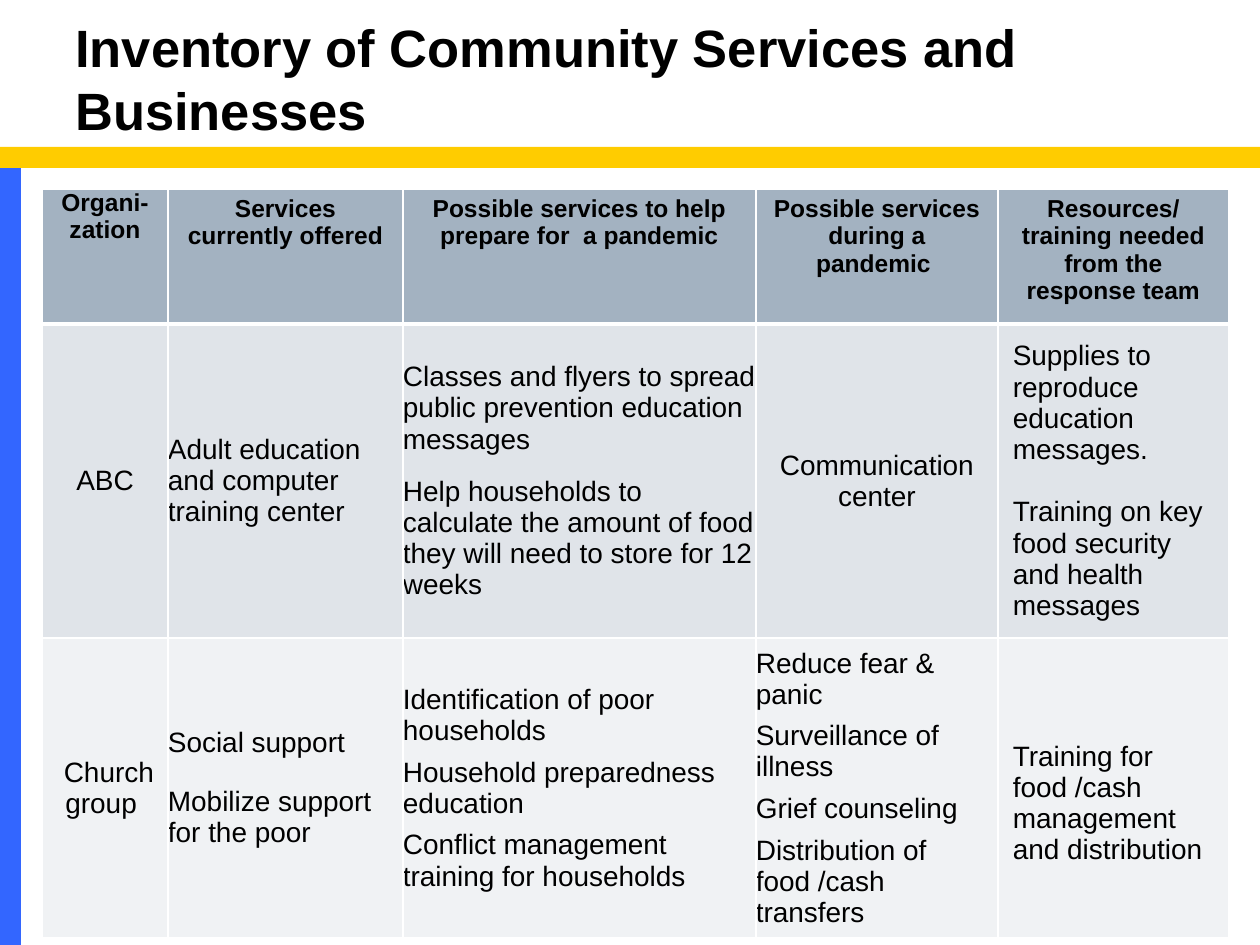
from dataclasses import dataclass

from lxml.etree import SubElement
from pptx import Presentation
from pptx.dml.color import RGBColor
from pptx.enum.shapes import MSO_SHAPE as Shape
from pptx.enum.text import MSO_ANCHOR as Anchor, PP_ALIGN as Align
from pptx.oxml.ns import qn
from pptx.util import Emu, Pt

PX = 914400 // 126
FONT = "Arial"
COLORS = {
    "text": "000000",
    "border": "FFFFFF",
    "gold": "FFCC00",
    "blue": "3366FF",
    "header": "A3B2C1",
    "odd": "E0E4E9",
    "even": "F0F2F4",
}
COL_WIDTHS = (126, 235, 353, 242, 231)
ROW_HEIGHTS = (135, 314, 276)
ROW_FILLS = ("header", "odd", "even")


@dataclass
class Bar:
    x: int
    y: int
    w: int
    h: int
    color: str


@dataclass
class Entry:
    paras: tuple[str, ...]
    align: Align = Align.LEFT
    after: int = 0
    side: int = 0
    top: int = 0
    bottom: int = 0
    anchor: Anchor = Anchor.MIDDLE
    size: int = 16
    bold: bool = False


def heading(text: str, side: int = 13, pad: int = 6) -> Entry:
    return Entry((text,), Align.CENTER, side=side, top=pad, bottom=pad,
                 anchor=Anchor.TOP, size=14, bold=True)


BARS = (Bar(0, 147, 1260, 21, "gold"), Bar(0, 168, 21, 777, "blue"))
ROWS = (
    (
        heading("Organi-zation", side=15, pad=0),
        heading("Services currently offered"),
        heading("Possible services to help prepare for  a pandemic"),
        heading("Possible services during a pandemic "),
        heading("Resources/ training needed from the response team"),
    ),
    (
        Entry(("ABC",), Align.CENTER),
        Entry(("Adult education and computer training center",)),
        Entry(("Classes and flyers to spread public prevention education messages",
               "Help households to calculate the amount of food they will need "
               "to store for 12 weeks"), after=12),
        Entry(("Communication center",), Align.CENTER),
        Entry(("Supplies to reproduce education messages.",
               "Training on key food security and health messages"),
              after=18, side=15),
    ),
    (
        Entry((" Church group ",), Align.CENTER),
        Entry(("Social support", "Mobilize support for the poor"), after=16),
        Entry(("Identification of poor households",
               "Household preparedness education",
               "Conflict management training for households"), after=6),
        Entry(("Reduce fear & panic", "Surveillance of illness",
               "Grief counseling", "Distribution of food /cash transfers"), after=6),
        Entry(("Training for  food /cash management and distribution",),
              side=15, top=31),
    ),
)


def px(n: int) -> Emu:
    return Emu(n * PX)


def rgb(name: str) -> RGBColor:
    return RGBColor.from_string(COLORS[name])


def write(tf, paras, *, size, bold=False, align=Align.LEFT, after=0) -> None:
    tf.word_wrap = True
    for i, text in enumerate(paras):
        p = tf.add_paragraph() if i else tf.paragraphs[0]
        p.alignment = align
        p.space_after = Pt(after if i < len(paras) - 1 else 0)
        r = p.add_run()
        r.text = text
        r.font.name = FONT
        r.font.size = Pt(size)
        r.font.bold = bold
        r.font.color.rgb = rgb("text")


def draw_bar(s, bar: Bar) -> None:
    sp = s.shapes.add_shape(Shape.RECTANGLE, *map(px, (bar.x, bar.y, bar.w, bar.h)))
    sp.shadow.inherit = False
    sp.fill.solid()
    sp.fill.fore_color.rgb = rgb(bar.color)
    sp.line.fill.background()


def set_borders(cell, top: int, bottom: int) -> None:
    tc_pr = cell._tc.get_or_add_tcPr()
    sides = (("a:lnL", 1), ("a:lnR", 1), ("a:lnT", top), ("a:lnB", bottom))
    for i, (tag, width) in enumerate(sides):
        ln = SubElement(tc_pr, qn(tag), w=str(Pt(width)))
        tc_pr.insert(i, ln)
        fill = SubElement(ln, qn("a:solidFill"))
        SubElement(fill, qn("a:srgbClr"), val=COLORS["border"])


def fill_cell(cell, entry: Entry, row: int) -> None:
    cell.fill.solid()
    cell.fill.fore_color.rgb = rgb(ROW_FILLS[row])
    cell.margin_left = cell.margin_right = px(entry.side)
    cell.margin_top, cell.margin_bottom = px(entry.top), px(entry.bottom)
    cell.vertical_anchor = entry.anchor
    write(cell.text_frame, entry.paras, size=entry.size, bold=entry.bold,
          align=entry.align, after=entry.after)
    set_borders(cell, top=3 if row == 1 else 1, bottom=3 if row == 0 else 1)


def draw_table(s, x: int, y: int) -> None:
    frame = s.shapes.add_table(len(ROW_HEIGHTS), len(COL_WIDTHS), px(x), px(y),
                               px(sum(COL_WIDTHS)), px(sum(ROW_HEIGHTS)))
    table = frame.table
    for col, width in zip(table.columns, COL_WIDTHS):
        col.width = px(width)
    for i, (row, height) in enumerate(zip(table.rows, ROW_HEIGHTS)):
        row.height = px(height)
        for cell, entry in zip(row.cells, ROWS[i]):
            fill_cell(cell, entry, i)


def main() -> None:
    prs = Presentation()
    prs.slide_width, prs.slide_height = px(1260), px(945)
    s = prs.slides.add_slide(prs.slide_layouts[6])
    for bar in BARS:
        draw_bar(s, bar)
    title = s.shapes.add_textbox(px(63), px(63), px(1071), px(84))
    title.text_frame.vertical_anchor = Anchor.BOTTOM
    write(title.text_frame, ("Inventory of Community Services and Businesses",),
          size=30, bold=True)
    draw_table(s, 42, 189)
    prs.save("out.pptx")


if __name__ == "__main__":
    main()
